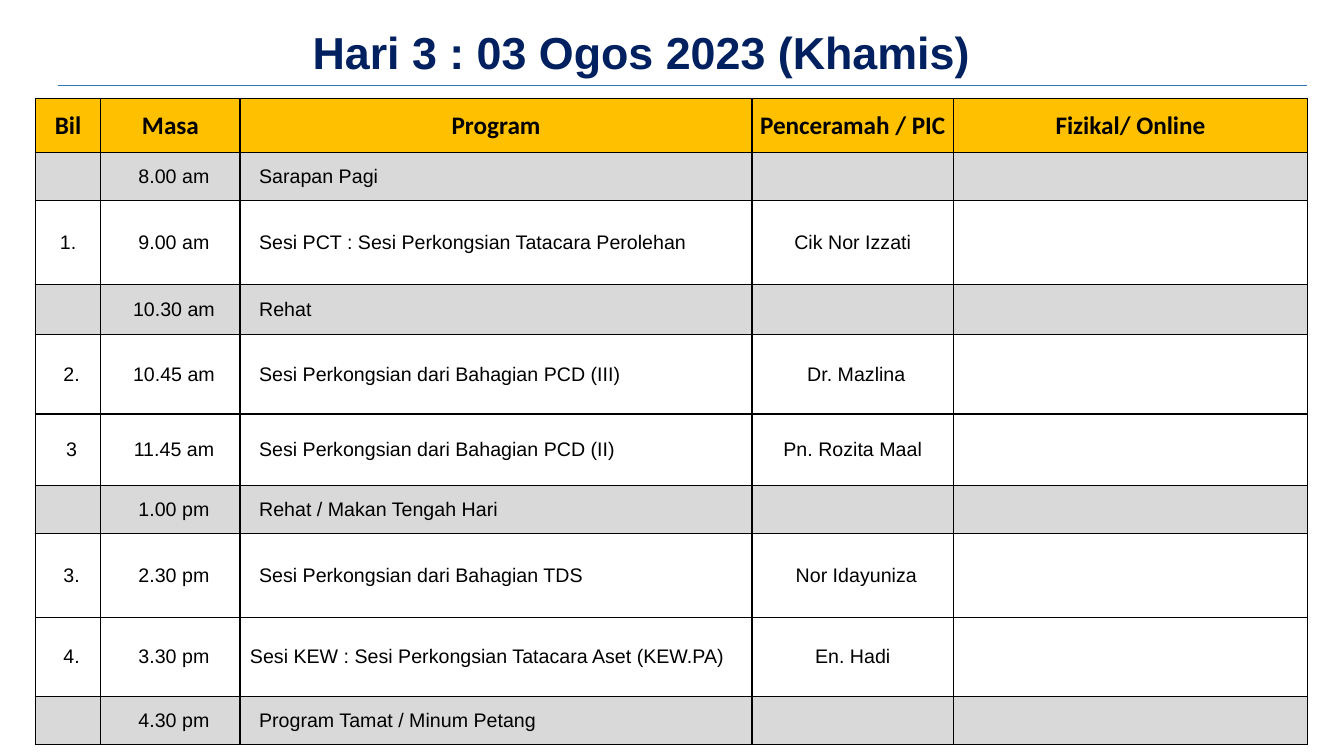
"""Build the day-three programme slide with its timetable."""
from pptx import Presentation, util as u
from pptx.dml.color import RGBColor
from pptx.enum import shapes, text
from pptx.oxml import parse_xml
from pptx.oxml.ns import nsdecls

TITLE = "Hari 3 : 03 Ogos 2023 (Khamis)"
HEADER = ("Bil", "Masa", "Program", "Penceramah / PIC", "Fizikal/ Online")
ROWS = [
    ("", "8.00 am", "Sarapan Pagi", "", ""),
    ("1.", "9.00 am", "Sesi PCT : Sesi Perkongsian Tatacara Perolehan", "Cik Nor Izzati", ""),
    ("", "10.30 am", "Rehat", "", ""),
    ("2.", "10.45 am", "Sesi Perkongsian dari Bahagian PCD (III)", "Dr. Mazlina", ""),
    ("3", "11.45 am", "Sesi Perkongsian dari Bahagian PCD (II)", "Pn. Rozita Maal", ""),
    ("", "1.00 pm", "Rehat / Makan Tengah Hari", "", ""),
    ("3.", "2.30 pm", "Sesi Perkongsian dari Bahagian TDS", "Nor Idayuniza", ""),
    ("4.", "3.30 pm", "Sesi KEW : Sesi Perkongsian Tatacara Aset (KEW.PA)", "En. Hadi", ""),
    ("", "4.30 pm", "Program Tamat / Minum Petang", "", ""),
]
COL_WIDTHS = (1.65, 3.51, 12.9, 5.08, 8.92)
ROW_HEIGHTS = (1.37, 1.2, 2.11, 1.27, 2, 1.81, 1.2, 2.11, 2.01, 1.2)
INDENTS = (0.18, 0.18, 0.48, 0, 0)
SPECIAL_INDENTS = {"1.": 0, "Dr. Mazlina": 0.18, "Nor Idayuniza": 0.18, ROWS[7][2]: 0.25}
PROGRAM_COL = 2
TITLE_FONT = {"name": "Arial", "size": u.Pt(32), "bold": True}
HEADER_FONT = {"name": "Calibri", "size": u.Pt(18), "bold": True}
BODY_FONT = {"name": "Arial", "size": u.Pt(14), "bold": False}
CENTER, LEFT = text.PP_ALIGN.CENTER, text.PP_ALIGN.LEFT


def rgb(color):
    return RGBColor.from_string(color)


def set_all(obj, values):
    for name, value in values.items():
        setattr(obj, name, value)


def write(tf, content, font, color, align):
    p = tf.paragraphs[0]
    p.alignment = align
    r = p.add_run()
    r.text = content
    set_all(r.font, font)
    r.font.color.rgb = rgb(color)


def add_borders(cell, color="000000", width=u.Pt(1)):
    tc_pr = cell._tc.get_or_add_tcPr()
    for i, side in enumerate("LRTB"):
        tc_pr.insert(i, parse_xml(
            f'<a:ln{side} {nsdecls("a")} w="{width}"><a:solidFill>'
            f'<a:srgbClr val="{color}"/></a:solidFill></a:ln{side}>'))


def fill_cell(cell, content, fill, font, align, left, right):
    set_all(cell, {
        "margin_left": u.Cm(left), "margin_right": u.Cm(right),
        "margin_top": 0, "margin_bottom": 0,
        "vertical_anchor": text.MSO_ANCHOR.MIDDLE,
    })
    cell.fill.solid()
    cell.fill.fore_color.rgb = rgb(fill)
    add_borders(cell)
    if content:
        write(cell.text_frame, content, font, "000000", align)


def add_title(s):
    sp = s.shapes.add_connector(shapes.MSO_CONNECTOR.STRAIGHT,
                                u.Cm(1.45), u.Cm(2.16), u.Cm(32.94), u.Cm(2.16))
    sp.line.color.rgb = rgb("2E75B6")
    sp.line.width = u.Pt(0.5)
    sp._element.spPr.append(parse_xml(f'<a:effectLst {nsdecls("a")}/>'))
    tf = s.shapes.add_textbox(u.Cm(4.83), u.Cm(0.61), u.Cm(22.68), u.Cm(1.37)).text_frame
    set_all(tf, {"word_wrap": True, "vertical_anchor": text.MSO_ANCHOR.MIDDLE})
    write(tf, TITLE, TITLE_FONT, "002060", CENTER)


def add_timetable(s):
    table = s.shapes.add_table(len(ROW_HEIGHTS), len(COL_WIDTHS), u.Cm(0.89), u.Cm(2.48),
                               u.Cm(sum(COL_WIDTHS)), u.Cm(sum(ROW_HEIGHTS))).table
    for column, width in zip(table.columns, COL_WIDTHS):
        column.width = u.Cm(width)
    for row, height in zip(table.rows, ROW_HEIGHTS):
        row.height = u.Cm(height)
    for c, label in enumerate(HEADER):
        fill_cell(table.cell(0, c), label, "FFC000", HEADER_FONT, CENTER, 0.17, 0.17)
    for r, row in enumerate(ROWS, 1):
        fill = "FFFFFF" if row[0] else "D9D9D9"
        for c, content in enumerate(row):
            align = LEFT if c == PROGRAM_COL else CENTER
            left = SPECIAL_INDENTS.get(content, INDENTS[c])
            fill_cell(table.cell(r, c), content, fill, BODY_FONT, align, left, 0)


def main():
    prs = Presentation()
    set_all(prs, {"slide_width": u.Cm(33.87), "slide_height": u.Cm(19.05)})
    s = prs.slides.add_slide(prs.slide_layouts[6])
    add_title(s)
    add_timetable(s)
    prs.save("out.pptx")


if __name__ == "__main__":
    main()
